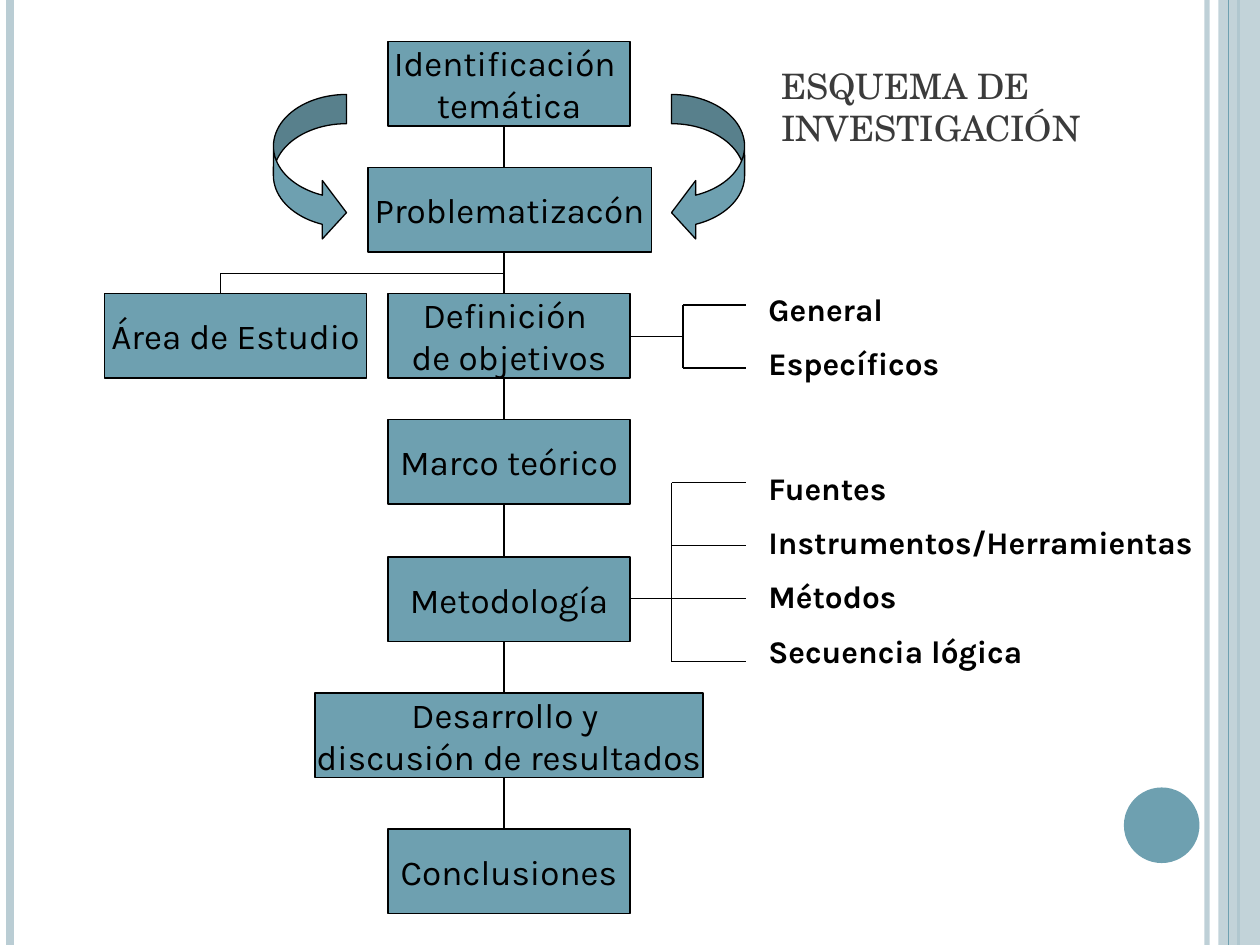
from lxml import etree
from pptx import Presentation
from pptx import util as u
from pptx.dml.color import RGBColor
from pptx.enum import shapes, text
from pptx.oxml import ns

COLORS = {"teal": "6EA0B0", "pale": "BACDD4", "ink": "000000", "title": "3B3B3B"}
BODY_FONT, TITLE_FONT = "Karla", "TeX Gyre Schola"
AXIS = 4
BOX_HEIGHT = 0.67
MAIN_LEFT, MAIN_WIDTH = 3.08, 1.92

# left, top, width, lines of text
BOXES = [
    (MAIN_LEFT, 0.33, MAIN_WIDTH, ["Identificación ", "temática"]),
    (2.92, 1.33, 2.25, ["Problematizacón"]),
    (0.83, 2.33, 2.08, ["Área de Estudio"]),
    (MAIN_LEFT, 2.33, MAIN_WIDTH, ["Definición ", "de objetivos"]),
    (MAIN_LEFT, 3.33, MAIN_WIDTH, ["Marco teórico"]),
    (MAIN_LEFT, 4.42, MAIN_WIDTH, ["Metodología"]),
    (2.5, 5.5, 3.08, ["Desarrollo y ", "discusión de resultados"]),
    (MAIN_LEFT, 6.58, MAIN_WIDTH, ["Conclusiones"]),
]


def rgb(name):
    return RGBColor.from_string(COLORS[name])


def set_alpha(fill, percent):
    """Make a solid fill partly transparent."""
    color = fill._xPr.find(ns.qn("a:solidFill"))[0]
    etree.SubElement(color, ns.qn("a:alpha")).set("val", str(percent * 1000))


def add_line(page, start, end, color="ink", width=0.75):
    points = [u.Inches(value) for value in (*start, *end)]
    line = page.shapes.add_connector(shapes.MSO_CONNECTOR.STRAIGHT, *points)
    line.line.color.rgb = rgb(color)
    line.line.width = u.Pt(width)
    etree.SubElement(line._element.spPr, ns.qn("a:effectLst"))
    return line


def add_shape(page, kind, left, top, width, height, fill="teal", outline=True):
    shape = page.shapes.add_shape(kind, *map(u.Inches, (left, top, width, height)))
    shape.shadow.inherit = False
    shape.fill.solid()
    shape.fill.fore_color.rgb = rgb(fill)
    if outline:
        shape.line.color.rgb = rgb("ink")
        shape.line.width = u.Pt(0.75)
    else:
        shape.line.fill.background()
    return shape


def write(frame, lines, size, color="ink", font=BODY_FONT, bold=False,
          align=text.PP_ALIGN.LEFT, gap=0):
    frame.text = "\n".join(lines)
    for para in frame.paragraphs:
        para.alignment = align
        para.space_before = u.Pt(gap)
        for span in para.runs:
            span.font.name = font
            span.font.size = u.Pt(size)
            span.font.bold = bold
            span.font.color.rgb = rgb(color)


def add_box(page, left, top, width, lines):
    box = add_shape(page, shapes.MSO_SHAPE.RECTANGLE, left, top, width, BOX_HEIGHT)
    box.text_frame.word_wrap = False
    box.text_frame.vertical_anchor = text.MSO_ANCHOR.MIDDLE
    write(box.text_frame, lines, 20, align=text.PP_ALIGN.CENTER)


def add_text(page, left, top, width, height, lines, size, **style):
    box = page.shapes.add_textbox(*map(u.Inches, (left, top, width, height)))
    box.text_frame.word_wrap = True
    write(box.text_frame, lines, size, **style)
    return box


def add_bracket(page, box_right, stem_y, spine_x, branch_ys):
    """Stem from a box to a spine that opens into branches."""
    add_line(page, (box_right, stem_y), (spine_x, stem_y))
    add_line(page, (spine_x, branch_ys[0]), (spine_x, branch_ys[-1]))
    for y in branch_ys:
        add_line(page, (spine_x, y), (5.92, y))


def add_curved_arrow(page, left, flipped=False):
    arrow = add_shape(page, shapes.MSO_SHAPE.CURVED_RIGHT_ARROW, left, 0.75, 0.58, 1.17)
    for index, value in enumerate((0.4, 0.8, 0.33)):
        arrow.adjustments[index] = value
    if flipped:
        arrow._element.spPr.xfrm.set("flipH", "1")


def add_frame(page):
    """Side stripes and the corner disc."""
    stripe = add_line(page, (9.58, 0), (9.58, 7.5), "pale", 3)
    set_alpha(stripe.line.fill, 93)
    add_line(page, (0.08, 0), (0.08, 7.5), "pale", 4.5)
    add_line(page, (9.83, 0), (9.83, 7.5), "teal", 1.5)
    band = add_shape(page, shapes.MSO_SHAPE.RECTANGLE, 9.67, 0, 0.33, 7.5, "pale", False)
    set_alpha(band.fill, 87)
    add_line(page, (9.75, 0), (9.75, 7.5), "teal")
    add_shape(page, shapes.MSO_SHAPE.OVAL, 8.92, 6.25, 0.6, 0.6, outline=False)


def main():
    deck = Presentation()
    deck.slide_width, deck.slide_height = u.Inches(10), u.Inches(7.5)
    page = deck.slides.add_slide(deck.slide_layouts[6])

    add_frame(page)
    title = add_text(page, 6.1, 0.25, 2.99, 0.98, ["ESQUEMA DE INVESTIGACIÓN"], 20,
                     color="title", font=TITLE_FONT)
    title.text_frame.vertical_anchor = text.MSO_ANCHOR.BOTTOM

    for box in BOXES:
        add_box(page, *box)

    details = [
        (2.25, 1.25, 0.4, ["General"]),
        (2.68, 1.75, 0.4, ["Específicos"]),
        (3.67, 3.83, 1.76,
         ["Fuentes", "Instrumentos/Herramientas", "Métodos", "Secuencia lógica"]),
    ]
    for top, width, height, lines in details:
        add_text(page, 6, top, width, height, lines, 18, bold=True, gap=9.5)

    add_bracket(page, 5, 2.67, 5.42, [2.42, 2.92])
    add_bracket(page, 5, 4.75, 5.33, [3.83, 4.33, 4.75, 5.25])

    tops = [top for left, top, width, lines in BOXES if left + width > AXIS]
    for upper, lower in zip(tops, tops[1:]):
        add_line(page, (AXIS, upper + BOX_HEIGHT), (AXIS, lower))
    add_line(page, (1.75, 2.17), (AXIS, 2.17))
    add_line(page, (1.75, 2.17), (1.75, 2.33))

    add_curved_arrow(page, 2.17)
    add_curved_arrow(page, 5.33, flipped=True)
    deck.save("out.pptx")


if __name__ == "__main__":
    main()
